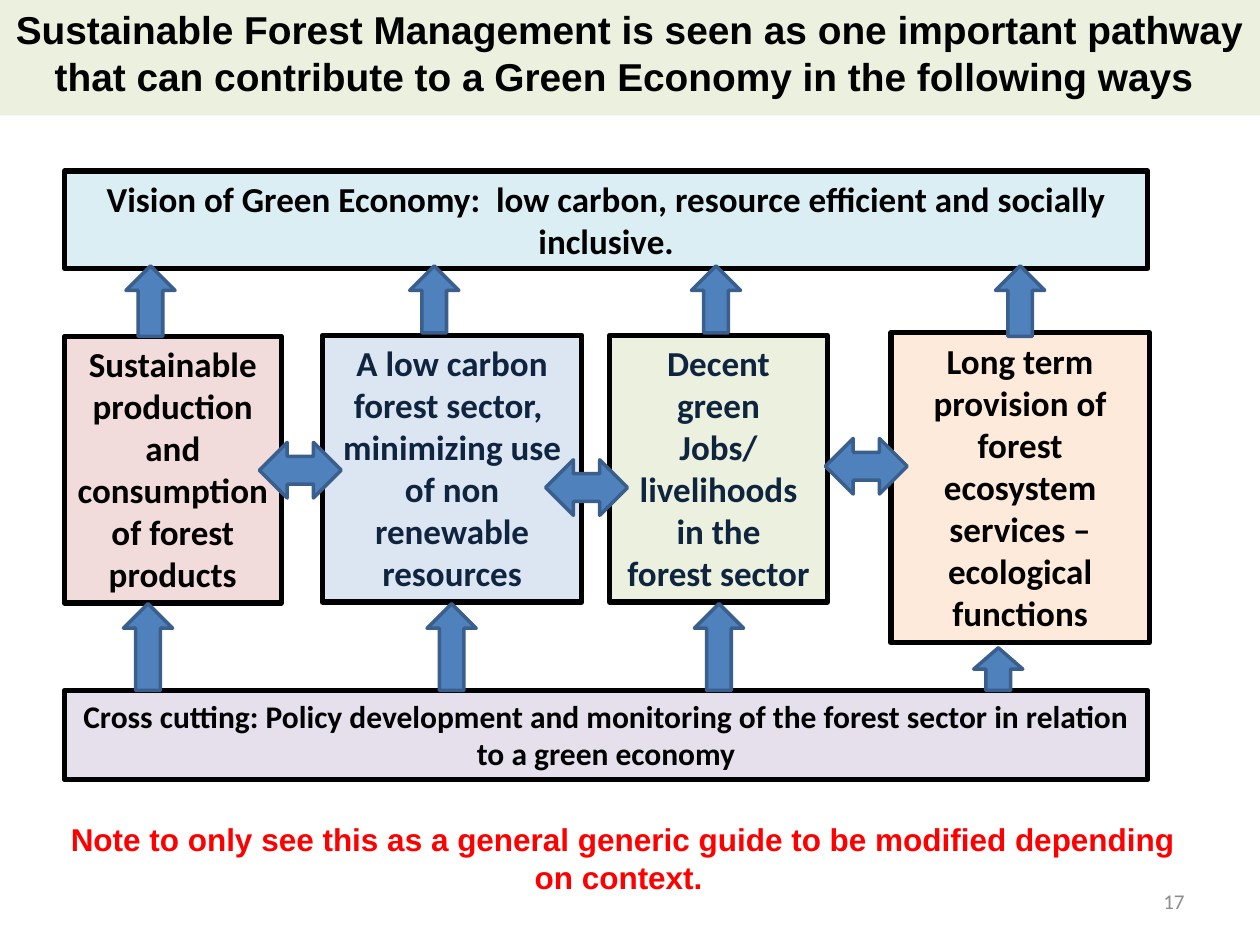
"""Build the slide on how forest management contributes to a green economy."""
from pptx import Presentation
from pptx.dml.color import RGBColor
from pptx.enum.shapes import MSO_SHAPE
from pptx.enum.text import MSO_ANCHOR, PP_ALIGN
from pptx.util import Cm, Pt

RECT, UP, BOTH = MSO_SHAPE.RECTANGLE, MSO_SHAPE.UP_ARROW, MSO_SHAPE.LEFT_RIGHT_ARROW
TOP, MIDDLE = MSO_ANCHOR.TOP, MSO_ANCHOR.MIDDLE
CENTER, RIGHT = PP_ALIGN.CENTER, PP_ALIGN.RIGHT
BLACK, NAVY = "000000", "0F243E"

TITLE = ("Sustainable Forest Management is seen as one important pathway "
         "that can contribute to a Green Economy in the following ways ")
NOTE = ("Note to only see this as a general generic guide to be modified "
        "depending on context. ")
PAGE = "17"

BARS = [
    ("Vision of Green Economy:  low carbon, resource efficient and socially inclusive.",
     3.45, 1.96, "DBEEF4", 20),
    ("Cross cutting: Policy development and monitoring of the forest sector "
     "in relation to a green economy", 13.92, 1.8, "E6E0EC", 18),
]
PILLARS = [
    (["Sustainable production and consumption of forest products"],
     (1.3, 6.78, 4.37, 5.38), "F2DCDB", BLACK),
    (["A low carbon", "forest sector,  minimizing use of non renewable resources"],
     (6.5, 6.76, 5.23, 5.38), "DCE6F2", NAVY),
    (["Decent green", "Jobs/", "livelihoods in the", "forest sector"],
     (12.29, 6.76, 4.39, 5.38), "EBF1DE", NAVY),
    (["Long term provision of forest ecosystem services – ecological functions"],
     (17.96, 6.71, 5.21, 6.25), "FDEADA", BLACK),
]
BAR_LEFT, BAR_WIDTH = 1.3, 21.84
ARROW_WIDTH = 0.99
VISION_ARROW_TOP, POLICY_TOP = 5.36, 13.92
VISION_ARROWS = [(2.54, 6.78), (8.26, 6.71), (13.94, 6.71), (20.07, 6.78)]
POLICY_ARROWS = [(2.49, 12.17), (8.61, 12.17), (14, 12.17), (19.63, 13.06)]
LINK_SIZE = (1.65, 1.12)
LINKS = [(5.23, 8.92), (11, 9.27), (16.64, 8.84)]


def color(value):
    return RGBColor.from_string(value)


def write(shape, lines, size, ink, font="Calibri", bold=True, align=CENTER, anchor=TOP):
    frame = shape.text_frame
    frame.word_wrap = True
    frame.vertical_anchor = anchor
    for index, line in enumerate(lines):
        paragraph = frame.add_paragraph() if index else frame.paragraphs[0]
        paragraph.alignment = align
        run = paragraph.add_run()
        run.text = line
        run.font.name = font
        run.font.size = Pt(size)
        run.font.bold = bold
        run.font.color.rgb = color(ink)


def draw(slide, kind, place, fill, outline=None, weight=0):
    shape = slide.shapes.add_shape(kind, *map(Cm, place))
    shape.shadow.inherit = False
    shape.fill.solid()
    shape.fill.fore_color.rgb = color(fill)
    if outline:
        shape.line.color.rgb = color(outline)
        shape.line.width = Pt(weight)
    else:
        shape.line.fill.background()
    return shape


def main():
    deck = Presentation()
    deck.slide_width, deck.slide_height = Cm(25.4), Cm(19.05)
    slide = deck.slides.add_slide(deck.slide_layouts[6])

    for lines, place, fill, ink in reversed(PILLARS):
        write(draw(slide, RECT, place, fill, BLACK, 3), lines, 20, ink)
    for words, top, height, fill, size in reversed(BARS):
        bar = draw(slide, RECT, (BAR_LEFT, top, BAR_WIDTH, height), fill, BLACK, 3)
        write(bar, [words], size, BLACK)

    arrows = [(UP, (left, top, ARROW_WIDTH, POLICY_TOP - top)) for left, top in POLICY_ARROWS]
    arrows += [(UP, (left, VISION_ARROW_TOP, ARROW_WIDTH, base - VISION_ARROW_TOP))
               for left, base in VISION_ARROWS]
    arrows += [(BOTH, corner + LINK_SIZE) for corner in LINKS]
    for kind, place in arrows:
        draw(slide, kind, place, "4F81BD", "3A5F8C", 2)

    banner = draw(slide, RECT, (0, 0, 25.4, 2.33), "EBF1DE")
    write(banner, [TITLE], 22.2, BLACK, "Arial")
    note = slide.shapes.add_textbox(Cm(0.76), Cm(16.41), Cm(23.6), Cm(1.8))
    write(note, [NOTE], 18, "FF0000", "Arial")
    page = slide.shapes.add_textbox(Cm(18.2), Cm(17.65), Cm(5.93), Cm(1.02))
    write(page, [PAGE], 12, "8C8C8C", bold=False, align=RIGHT, anchor=MIDDLE)

    deck.save("out.pptx")


if __name__ == "__main__":
    main()
